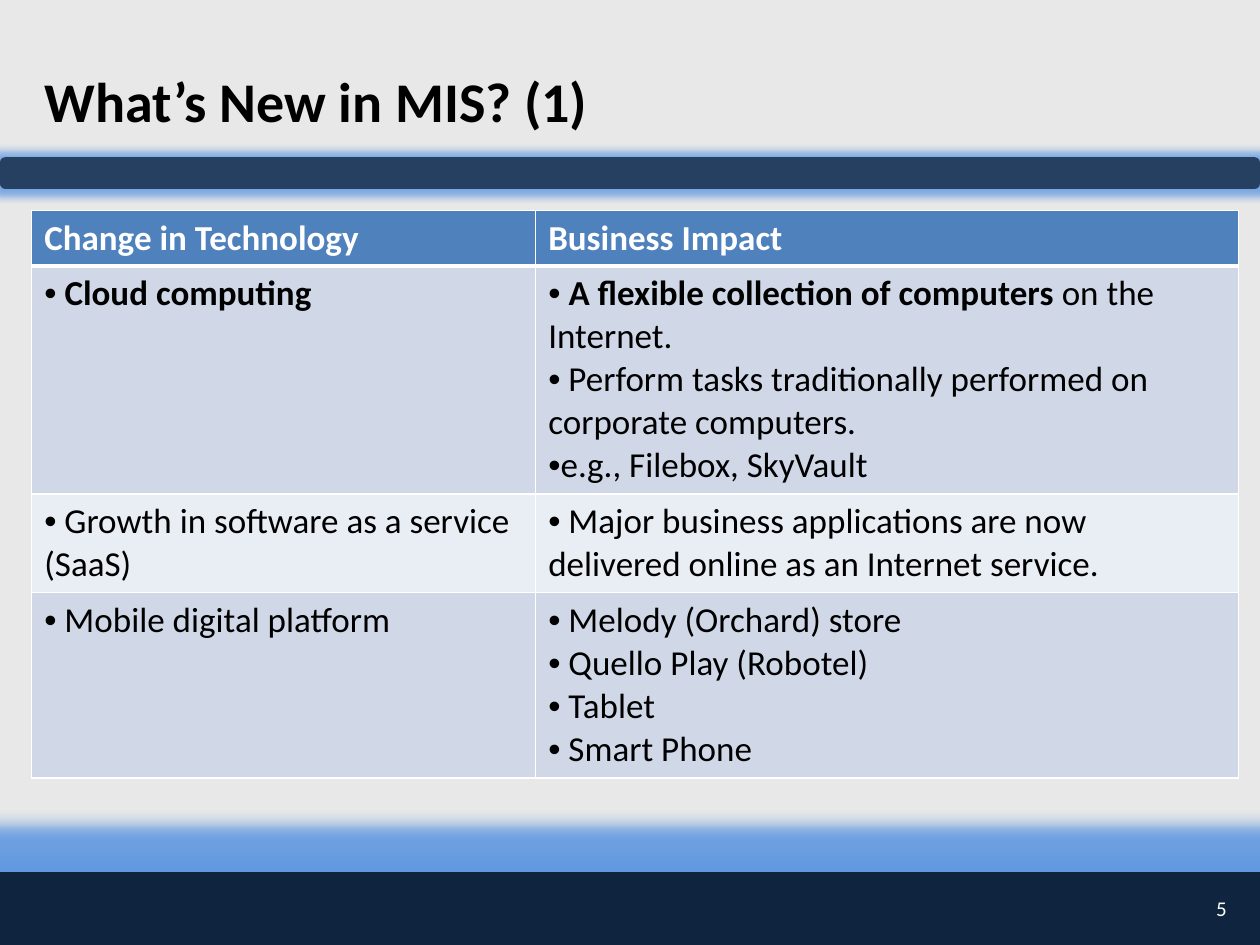
"""Build the slide "What's New in MIS? (1)" with its table of technology changes."""
from lxml import etree
from pptx import Presentation
from pptx.dml.color import RGBColor
from pptx.enum.shapes import MSO_SHAPE
from pptx.enum.text import MSO_ANCHOR, PP_ALIGN
from pptx.oxml.ns import qn
from pptx.util import Cm, Pt

RECTANGLE, ROUNDED = MSO_SHAPE.RECTANGLE, MSO_SHAPE.ROUNDED_RECTANGLE
LEFT, RIGHT, MIDDLE = PP_ALIGN.LEFT, PP_ALIGN.RIGHT, MSO_ANCHOR.MIDDLE

COLORS = {
    "background": "E8E8E8", "footer": "0F243E", "divider": "254061",
    "glow": "6098E0", "header": "4F81BD", "odd": "D0D8E8",
    "even": "E9EDF4", "white": "FFFFFF", "black": "000000",
}


def rgb(name):
    return RGBColor.from_string(COLORS[name])


def write(frame, text, size=20, color="black", bold=False, align=LEFT, bullet=False):
    """Fill a text frame; lines become paragraphs and *marked* words turn bold."""
    for index, line in enumerate(text.split("\n")):
        paragraph = frame.add_paragraph() if index else frame.paragraphs[0]
        paragraph.alignment = align
        if bullet:
            properties = paragraph._p.get_or_add_pPr()
            properties.set("marL", "0")
            properties.set("indent", "0")
            etree.SubElement(properties, qn("a:buFont"), typeface="Arial")
            etree.SubElement(properties, qn("a:buChar"), char="•")
        for part, words in enumerate(line.split("*")):
            if words:
                run = paragraph.add_run()
                run.text = words
                run.font.name = "Calibri"
                run.font.size = Pt(size)
                run.font.bold = bold or part % 2 == 1
                run.font.color.rgb = rgb(color)


deck = Presentation()
deck.slide_width, deck.slide_height = Cm(25.4), Cm(19.05)
slide = deck.slides.add_slide(deck.slide_layouts[5])
slide.background.fill.solid()
slide.background.fill.fore_color.rgb = rgb("background")

bands = [
    (RECTANGLE, 17.58, 1.47, "footer", 18, 90),
    (ROUNDED, 3.17, 0.64, "divider", 8, 80),
]
for outline, top, height, color, radius, opacity in bands:
    band = slide.shapes.add_shape(outline, 0, Cm(top), deck.slide_width, Cm(height))
    band.fill.solid()
    band.fill.fore_color.rgb = rgb(color)
    band.line.fill.background()
    band.shadow.inherit = False
    effects = band._element.spPr.find(qn("a:effectLst"))
    glow = etree.SubElement(effects, qn("a:glow"), rad=str(Pt(radius)))
    glow_color = etree.SubElement(glow, qn("a:srgbClr"), val=COLORS["glow"])
    etree.SubElement(glow_color, qn("a:alpha"), val=str(opacity * 1000))

changes = [
    ("Change in Technology", "Business Impact", 1),
    (" *Cloud computing*",
     " *A flexible collection of computers *on the Internet.\n"
     " Perform tasks traditionally performed on corporate computers.\n"
     "e.g., Filebox, SkyVault", 5),
    (" Growth in software as a service (SaaS)",
     " Major business applications are now delivered online as an Internet service.", 2),
    (" Mobile digital platform",
     " Melody (Orchard) store\n Quello Play (Robotel)\n Tablet\n Smart Phone", 4),
]
column_widths = [10.16, 14.17]
row_heights = [0.25 + 0.87 * lines for *_, lines in changes]
table = slide.shapes.add_table(
    len(changes), len(column_widths), Cm(0.64), Cm(4.24),
    Cm(sum(column_widths)), Cm(sum(row_heights))).table
for column, width in zip(table.columns, column_widths):
    column.width = Cm(width)

for row_index, (technology, impact, _) in enumerate(changes):
    table.rows[row_index].height = Cm(row_heights[row_index])
    is_header = row_index == 0
    row_color = "header" if is_header else "odd" if row_index % 2 else "even"
    border_widths = {"L": 1, "R": 1, "T": 3 if row_index == 1 else 1, "B": 3 if is_header else 1}
    for column_index, text in enumerate((technology, impact)):
        cell = table.cell(row_index, column_index)
        for side, width in border_widths.items():
            border = etree.SubElement(
                cell._tc.get_or_add_tcPr(), qn(f"a:ln{side}"), w=str(Pt(width)))
            border_fill = etree.SubElement(border, qn("a:solidFill"))
            etree.SubElement(border_fill, qn("a:srgbClr"), val=COLORS["white"])
        cell.fill.solid()
        cell.fill.fore_color.rgb = rgb(row_color)
        write(cell.text_frame, text, color="white" if is_header else "black",
              bold=is_header, bullet=not is_header)

title = slide.shapes.title
title.left, title.top, title.width, title.height = Cm(0.64), Cm(1.06), Cm(22.01), Cm(1.91)
title.text_frame.vertical_anchor = MIDDLE
write(title.text_frame, "What’s New in MIS? (1)", size=32, bold=True)

page_number = slide.shapes.add_textbox(Cm(23.92), Cm(17.78), Cm(1.06), Cm(1.06))
page_number.text_frame.word_wrap = True
page_number.text_frame.vertical_anchor = MIDDLE
write(page_number.text_frame, "5", size=12, color="white", align=RIGHT)

deck.save("out.pptx")
